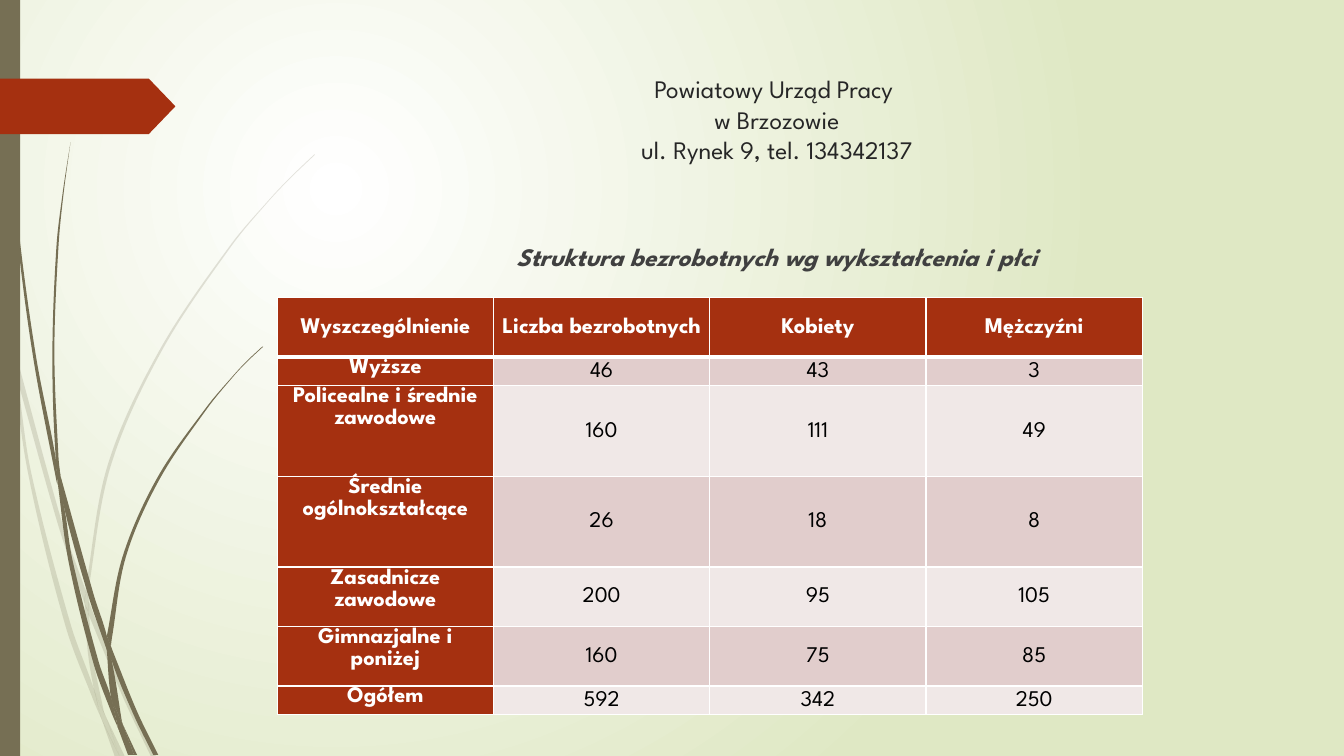
from math import dist

from lxml import etree
from pptx import Presentation
from pptx.dml.color import RGBColor
from pptx.enum.shapes import MSO_SHAPE
from pptx.enum.text import MSO_ANCHOR, PP_ALIGN
from pptx.oxml import parse_xml
from pptx.oxml.ns import nsdecls, qn
from pptx.util import Inches, Pt

FONT = "League Spartan"
RUST, OLIVE, WHITE = "A53010", "766F54", "FFFFFF"
BANDS = ("E1CDCC", "F0E8E7")
UNITS = 1000  # outline units to the inch

# Each blade of grass is its two long edges, both from the top down.
PALE_BLADES = [
    ([(0, 2.82), (0.09, 3.22), (0.11, 3.5)], [(0, 2.99), (0.1, 3.44), (0.11, 3.5)]),
    ([(0.14, 3.45), (0.62, 5.2), (0.85, 5.86)], [(0.17, 3.76), (0.58, 5.22), (0.84, 5.99)]),
    ([(0.88, 5.96), (0.92, 6.07), (1.27, 6.92), (1.55, 7.51)],
     [(0.88, 6.1), (1.23, 6.94), (1.5, 7.51)]),
    ([(1.05, 7.11), (1.24, 7.51)], [(1.05, 7.11), (1.19, 7.51)]),
    ([(0.11, 3.5), (0.17, 3.76), (0.31, 4.69), (0.7, 6.19), (0.93, 6.83), (0.99, 7.07)],
     [(0.11, 3.5), (0.28, 4.7), (0.65, 6.21), (0.92, 6.93), (1.01, 7.14)]),
    ([(0.84, 5.99), (0.88, 6.08), (0.91, 6.46), (1.03, 7.06)],
     [(0.84, 5.99), (0.87, 6.46), (0.93, 6.83), (0.96, 6.92), (1.05, 7.11)]),
    ([(3.12, 1.54), (2.9, 1.75), (2.68, 1.98), (2.29, 2.45), (1.6, 3.49), (1.1, 4.62),
      (0.88, 5.84), (0.88, 5.96)],
     [(3.12, 1.53), (2.89, 1.75), (2.68, 1.97), (2.28, 2.44), (1.58, 3.48), (1.07, 4.61),
      (0.85, 5.84), (0.85, 5.86)]),
    ([(1.01, 7.14), (1.19, 7.51)], [(1.01, 7.14), (1.14, 7.51)]),
    ([(0.85, 5.86), (0.88, 5.96), (0.88, 6.1)], [(0.85, 5.86), (0.84, 5.99), (0.88, 6.08)]),
    ([(0.93, 6.83), (0.96, 6.92), (1.05, 7.11), (1.19, 7.51)],
     [(0.93, 6.83), (0.99, 7.07), (1.01, 7.14), (1.19, 7.51)]),
]
DARK_BLADES = [
    ([(0.04, 0), (0.05, 0.48), (0.08, 1.09), (0.19, 2.32), (0.36, 3.55), (0.55, 4.53), (0.57, 4.81)],
     [(0.03, 0), (0.04, 0.48), (0.07, 1.1), (0.17, 2.33), (0.33, 3.55), (0.56, 4.77), (0.57, 4.81)]),
    ([(0.6, 4.72), (0.93, 5.9), (1.06, 6.31), (1.06, 6.45)],
     [(0.6, 4.72), (0.64, 5.05), (0.88, 5.92), (1.06, 6.45)]),
    ([(1.1, 6.41), (1.13, 6.49), (1.36, 7.06), (1.57, 7.49)],
     [(1.1, 6.41), (1.11, 6.56), (1.32, 7.08), (1.52, 7.49)]),
    ([(0.57, 4.77), (0.64, 5.05), (0.72, 5.56), (0.98, 6.57), (1.1, 6.91), (1.16, 7.17)],
     [(0.57, 4.77), (0.68, 5.57), (0.93, 6.59), (1.11, 7.08), (1.17, 7.22)]),
    ([(0.7, 1.41), (0.63, 1.93), (0.58, 2.45), (0.54, 3.49), (0.58, 4.53), (0.6, 4.72)],
     [(0.7, 1.41), (0.62, 1.93), (0.56, 2.45), (0.52, 3.49), (0.55, 4.49), (0.6, 4.72)]),
    ([(1.22, 7.19), (1.36, 7.49)], [(1.22, 7.19), (1.33, 7.49)]),
    ([(0.55, 4.49), (0.6, 4.72), (0.64, 5.05)], [(0.55, 4.49), (0.57, 4.77), (0.64, 5.05)]),
    ([(2.61, 3.44), (2.45, 3.59), (2.31, 3.74), (2.05, 4.06), (1.58, 4.76), (1.25, 5.52),
      (1.11, 6.33), (1.1, 6.41)],
     [(2.6, 3.44), (2.45, 3.58), (2.31, 3.73), (2.04, 4.05), (1.56, 4.74), (1.22, 5.51),
      (1.06, 6.31)]),
    ([(1.17, 7.22), (1.31, 7.49)], [(1.17, 7.22), (1.27, 7.49)]),
    ([(1.06, 6.45), (1.11, 6.56), (1.21, 7.16)],
     [(1.06, 6.45), (1.1, 6.91), (1.16, 7.06), (1.22, 7.19)]),
    ([(1.06, 6.31), (1.1, 6.41), (1.11, 6.56)], [(1.06, 6.31), (1.06, 6.45), (1.11, 6.56)]),
    ([(1.1, 6.91), (1.16, 7.06), (1.22, 7.19), (1.33, 7.49)],
     [(1.1, 6.91), (1.16, 7.17), (1.17, 7.22), (1.3, 7.49)]),
]

HEADER = ["Wyszczególnienie", "Liczba bezrobotnych", "Kobiety", "Mężczyźni"]
EDUCATION = [
    ("Wyższe", 46, 43, 3),
    ("Policealne i średnie zawodowe", 160, 111, 49),
    ("Średnie ogólnokształcące", 26, 18, 8),
    ("Zasadnicze zawodowe", 200, 95, 105),
    ("Gimnazjalne i poniżej", 160, 75, 85),
    ("Ogółem", 592, 342, 250),
]
ROW_HEIGHTS = [0.59, 0.28, 0.9, 0.9, 0.59, 0.59, 0.28]


def color(value):
    return RGBColor.from_string(value)


def paint(shape, value):
    shape.shadow.inherit = False
    shape.fill.solid()
    shape.fill.fore_color.rgb = color(value)
    shape.line.fill.background()


def style(para, size, value, bold=False, italic=False):
    para.alignment = PP_ALIGN.CENTER
    font = para.font
    font.name, font.size, font.bold, font.italic = FONT, Pt(size), bold, italic
    font.color.rgb = color(value)


def add_background(page):
    page.element.find(qn("p:cSld")).insert(0, parse_xml(
        f'<p:bg {nsdecls("p", "a")}><p:bgPr><a:gradFill rotWithShape="1"><a:gsLst>'
        '<a:gs pos="0"><a:srgbClr val="FFFFFF"/></a:gs>'
        '<a:gs pos="100000"><a:srgbClr val="DFE8C4"/></a:gs></a:gsLst>'
        '<a:path path="circle"><a:fillToRect l="50000" t="50000" r="100000" b="100000"/></a:path>'
        '</a:gradFill><a:effectLst/></p:bgPr></p:bg>'))


def bezier_points(knots):
    """Two handles and an end point for each span, timed by chord length."""
    slopes = []
    for i in range(len(knots)):
        near = knots[max(i - 1, 0):i + 2]
        length = sum(dist(a, b) for a, b in zip(near, near[1:]))
        slopes.append([(near[-1][k] - near[0][k]) / length for k in (0, 1)])
    points = []
    for i, (start, end) in enumerate(zip(knots, knots[1:])):
        reach = dist(start, end) / 3
        points += [tuple(start[k] + reach * slopes[i][k] for k in (0, 1)),
                   tuple(end[k] - reach * slopes[i + 1][k] for k in (0, 1)), end]
    return points


def add_blade(page, one_edge, other_edge, opacity):
    there, back = bezier_points(one_edge), bezier_points(other_edge[::-1])
    outline = [(x * UNITS, y * UNITS) for x, y in [one_edge[0], *there, other_edge[-1], *back]]
    builder = page.shapes.build_freeform(*outline[0], scale=Inches(1) / UNITS)
    builder.add_line_segments(outline[1:], close=True)
    blade = builder.convert_to_shape()
    paint(blade, OLIVE)
    lines = list(blade.element.iter(qn("a:lnTo")))
    curved = lines[:len(there)] + lines[len(there) + 1:len(there) + 1 + len(back)]
    for i in range(0, len(curved), 3):
        curve = etree.Element(qn("a:cubicBezTo"))
        curved[i].addprevious(curve)
        for line in curved[i:i + 3]:
            curve.append(line[0])
            line.getparent().remove(line)
    if opacity < 100:
        tint = blade.element.spPr.find(qn("a:solidFill")).find(qn("a:srgbClr"))
        etree.SubElement(tint, qn("a:alpha"), val=str(opacity * 1000))


def add_decoration(page):
    for blades, opacity in ((PALE_BLADES, 20), (DARK_BLADES, 100)):
        for one_edge, other_edge in blades:
            add_blade(page, one_edge, other_edge, opacity)
    bar = page.shapes.add_shape(MSO_SHAPE.RECTANGLE, 0, 0, Inches(0.2), Inches(7.5))
    paint(bar, OLIVE)
    flag = page.shapes.add_shape(MSO_SHAPE.PENTAGON, 0, Inches(0.78), Inches(1.74), Inches(0.55))
    flag.adjustments[0] = 0.48
    paint(flag, RUST)


def add_title(page, left, top, width, height):
    title = page.shapes.title
    title.left, title.top, title.width, title.height = map(Inches, (left, top, width, height))
    frame = title.text_frame
    frame.text = "Powiatowy Urząd Pracy \vw Brzozowie\vul. Rynek 9, tel. 134342137"
    frame.vertical_anchor = MSO_ANCHOR.TOP
    style(frame.paragraphs[0], 18, "262626")


def add_subtitle(page, left, top, width, height):
    frame = page.shapes.add_textbox(*map(Inches, (left, top, width, height))).text_frame
    frame.word_wrap = True
    frame.text = "Struktura bezrobotnych wg wykształcenia i płci"
    para = frame.paragraphs[0]
    para.space_before = Pt(10)
    style(para, 18, "404040", bold=True, italic=True)


def add_borders(cell, top, bottom):
    properties = cell._tc.get_or_add_tcPr()
    for side, points in (("L", 1), ("R", 1), ("T", top), ("B", bottom)):
        properties.append(parse_xml(
            f'<a:ln{side} {nsdecls("a")} w="{Pt(points)}"><a:solidFill>'
            f'<a:srgbClr val="{WHITE}"/></a:solidFill></a:ln{side}>'))


def fill_cell(cell, text, row, column):
    heading = row == 0 or column == 0
    cell.text = str(text)
    cell.margin_left = cell.margin_right = Inches(0.07)
    cell.margin_top = cell.margin_bottom = 0
    cell.vertical_anchor = MSO_ANCHOR.TOP if row and column == 0 else MSO_ANCHOR.MIDDLE
    add_borders(cell, top=3 if row == 1 else 1, bottom=3 if row == 0 else 1)
    cell.fill.solid()
    cell.fill.fore_color.rgb = color(RUST if heading else BANDS[(row - 1) % 2])
    para = cell.text_frame.paragraphs[0]
    para.line_spacing = 1.07
    style(para, 16, WHITE if heading else "000000", bold=heading)


def add_education_table(page, left, top, width):
    rows = [HEADER, *EDUCATION]
    table = page.shapes.add_table(
        len(rows), len(HEADER), Inches(left), Inches(top),
        Inches(width), Inches(sum(ROW_HEIGHTS))).table
    for column in table.columns:
        column.width = Inches(width / len(HEADER))
    for r, (values, height) in enumerate(zip(rows, ROW_HEIGHTS)):
        table.rows[r].height = Inches(height)
        for c, value in enumerate(values):
            fill_cell(table.cell(r, c), value, r, c)


def main():
    deck = Presentation()
    deck.slide_width, deck.slide_height = Inches(13.33), Inches(7.5)
    page = deck.slides.add_slide(deck.slide_layouts.get_by_name("Title Only"))
    add_background(page)
    add_decoration(page)
    add_title(page, 2.83, 0.68, 9.75, 1.4)
    add_subtitle(page, 2.83, 2.34, 9.75, 0.53)
    add_education_table(page, 2.75, 2.95, 8.58)
    deck.save("out.pptx")


if __name__ == "__main__":
    main()
